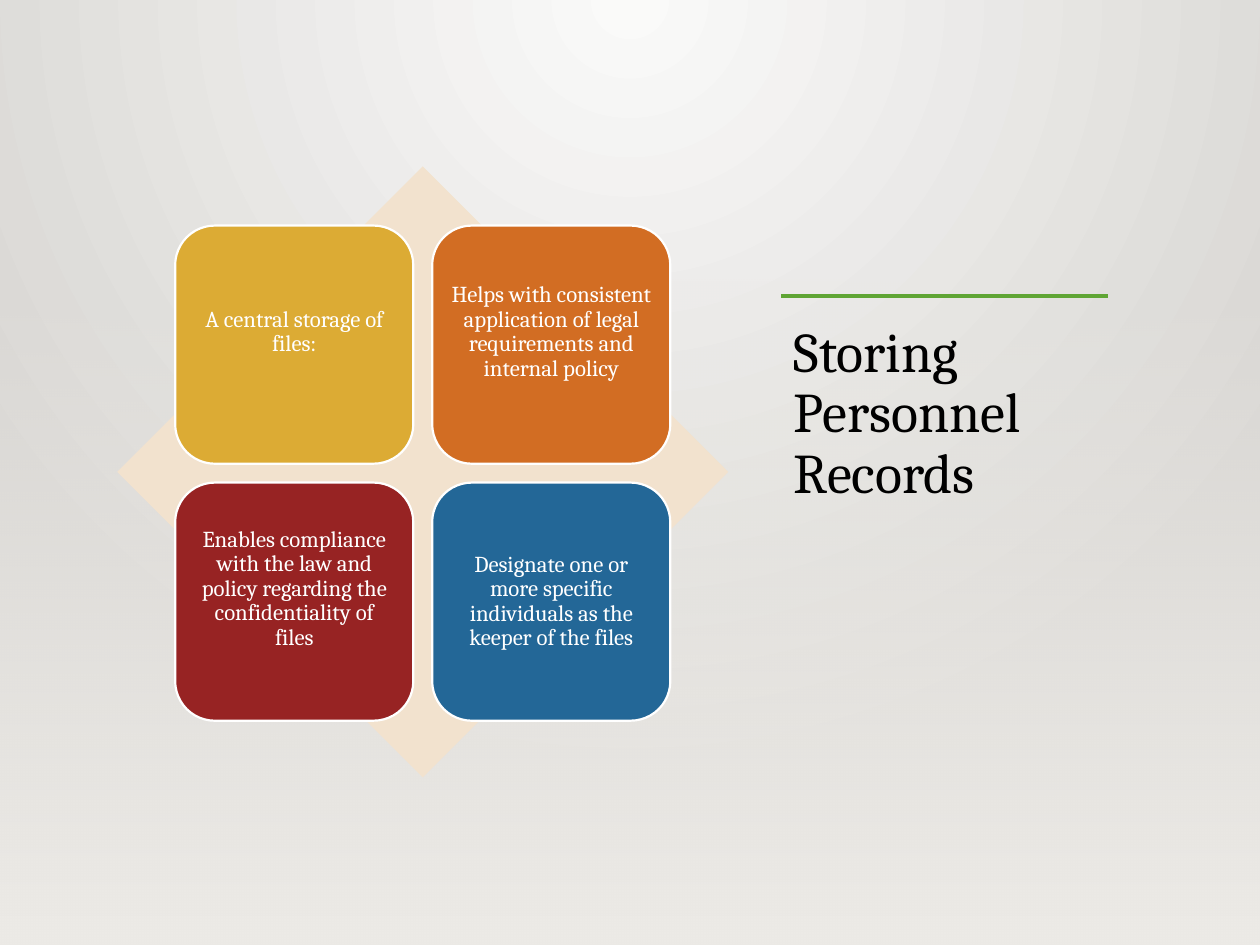
import pptx
import pptx.dml.color
import pptx.enum.shapes
import pptx.enum.text
import pptx.oxml.ns
import pptx.util
from lxml import etree
from pptx.util import Inches

FONT = "Cambria"
COLORS = {
    "center": "FAFAF9",
    "edge": "D7D5D2",
    "floor": "EDEBE7",
    "accent": "5FA534",
    "title": "000000",
    "diamond": "F2E2CE",
    "white": "FFFFFF",
    "gold": "DCAB34",
    "orange": "D26D23",
    "red": "972323",
    "blue": "236797",
}
TILES = [
    ("A central storage of files:", "gold", 0.25),
    ("Helps with consistent application of legal requirements and internal policy", "orange", 0.25),
    ("Enables compliance with the law and policy regarding the confidentiality of files", "red", 0.25),
    ("Designate one or more specific individuals as the keeper of the files", "blue", 0.05),
]
TILE_LEFT, TILE_TOP = 1.39, 1.79
TILE_SIZE, TILE_PITCH = 1.89, 2.04


def rgb(name):
    return pptx.dml.color.RGBColor.from_string(COLORS[name])


def set_gradient(fill, start, end):
    fill.gradient()
    for stop, name in zip(fill.gradient_stops, (start, end)):
        stop.color.rgb = rgb(name)


def add_child(parent, tag, **attributes):
    return etree.SubElement(parent, pptx.oxml.ns.qn(tag), **attributes)


def paint_background(slide):
    set_gradient(slide.background.fill, "center", "edge")
    gradient = slide.element.xpath(".//p:bgPr/a:gradFill")[0]
    for linear in gradient.xpath("./a:lin"):
        gradient.remove(linear)
    glow = add_child(gradient, "a:path", path="circle")
    add_child(glow, "a:fillToRect", l="43000", t="0", r="43000", b="100000")


def add_floor(slide):
    floor = slide.shapes.add_shape(
        pptx.enum.shapes.MSO_SHAPE.RECTANGLE, 0, Inches(2.21), Inches(10), Inches(5.29))
    floor.shadow.inherit = False
    floor.line.fill.background()
    set_gradient(floor.fill, "floor", "floor")
    floor.fill.gradient_angle = 270
    first_color = floor.element.xpath(".//a:gs/a:srgbClr")[0]
    add_child(first_color, "a:alpha", val="0")
    slide.shapes.title.element.addprevious(floor.element)


def add_text(frame, text, size, color, alignment):
    paragraph = frame.paragraphs[0]
    paragraph.alignment = alignment
    paragraph.line_spacing = 0.9
    run = paragraph.add_run()
    run.text = text
    run.font.name = FONT
    run.font.size = pptx.util.Pt(size)
    run.font.color.rgb = rgb(color)


def set_title(slide, text):
    title = slide.shapes.title
    title.left, title.top = Inches(6.2), Inches(2.52)
    title.width, title.height = Inches(2.59), Inches(4.1)
    frame = title.text_frame
    frame.word_wrap = True
    frame.auto_size = pptx.enum.text.MSO_AUTO_SIZE.NONE
    frame.vertical_anchor = pptx.enum.text.MSO_ANCHOR.TOP
    add_text(frame, text, 32, "title", pptx.enum.text.PP_ALIGN.LEFT)


def add_title_rule(slide):
    rule = slide.shapes.add_connector(
        pptx.enum.shapes.MSO_CONNECTOR.STRAIGHT,
        Inches(6.2), Inches(2.35), Inches(8.79), Inches(2.35))
    rule.line.color.rgb = rgb("accent")
    rule.line.width = pptx.util.Pt(2.5)
    add_child(rule.element.spPr, "a:effectLst")


def add_solid(shapes, preset, left, top, size, color):
    solid = shapes.add_shape(preset, Inches(left), Inches(top), Inches(size), Inches(size))
    solid.shadow.inherit = False
    solid.fill.solid()
    solid.fill.fore_color.rgb = rgb(color)
    solid.line.fill.background()
    return solid


def add_tile(shapes, left, top, text, color, bottom_inset):
    tile = add_solid(shapes, pptx.enum.shapes.MSO_SHAPE.ROUNDED_RECTANGLE,
                     left, top, TILE_SIZE, color)
    tile.line.color.rgb = rgb("white")
    tile.line.width = pptx.util.Pt(1.25)
    frame = tile.text_frame
    frame.word_wrap = True
    frame.vertical_anchor = pptx.enum.text.MSO_ANCHOR.MIDDLE
    frame.margin_left = frame.margin_right = frame.margin_top = Inches(0.05)
    frame.margin_bottom = Inches(bottom_inset)
    add_text(frame, text, 13, "white", pptx.enum.text.PP_ALIGN.CENTER)


def add_matrix(slide):
    matrix = slide.shapes.add_group_shape()
    add_solid(matrix.shapes, pptx.enum.shapes.MSO_SHAPE.DIAMOND, 0.93, 1.32, 4.85, "diamond")
    for index, (text, color, bottom_inset) in enumerate(TILES):
        row, column = divmod(index, 2)
        add_tile(matrix.shapes, TILE_LEFT + column * TILE_PITCH,
                 TILE_TOP + row * TILE_PITCH, text, color, bottom_inset)


def main():
    presentation = pptx.Presentation()
    presentation.slide_width = Inches(10)
    presentation.slide_height = Inches(7.5)
    slide = presentation.slides.add_slide(presentation.slide_layouts[5])
    paint_background(slide)
    add_floor(slide)
    set_title(slide, "Storing Personnel Records")
    add_title_rule(slide)
    add_matrix(slide)
    presentation.save("out.pptx")


if __name__ == "__main__":
    main()
